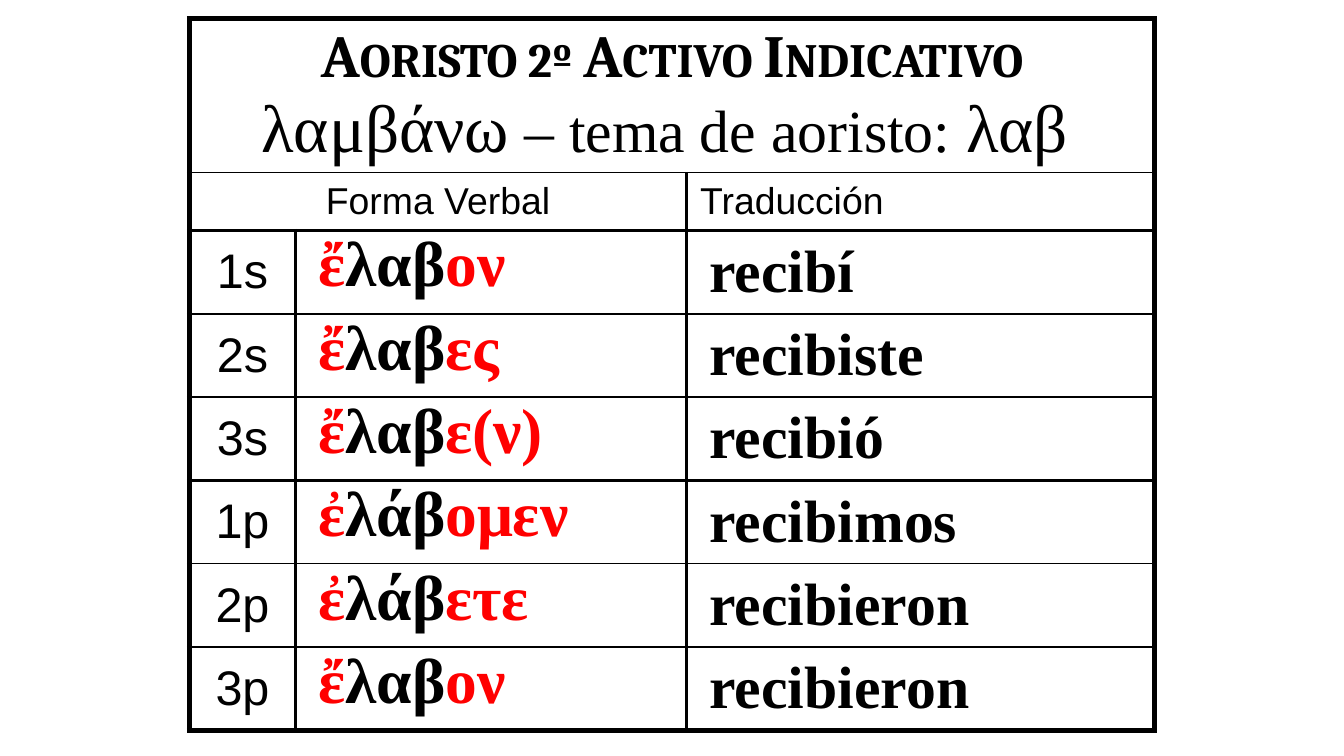
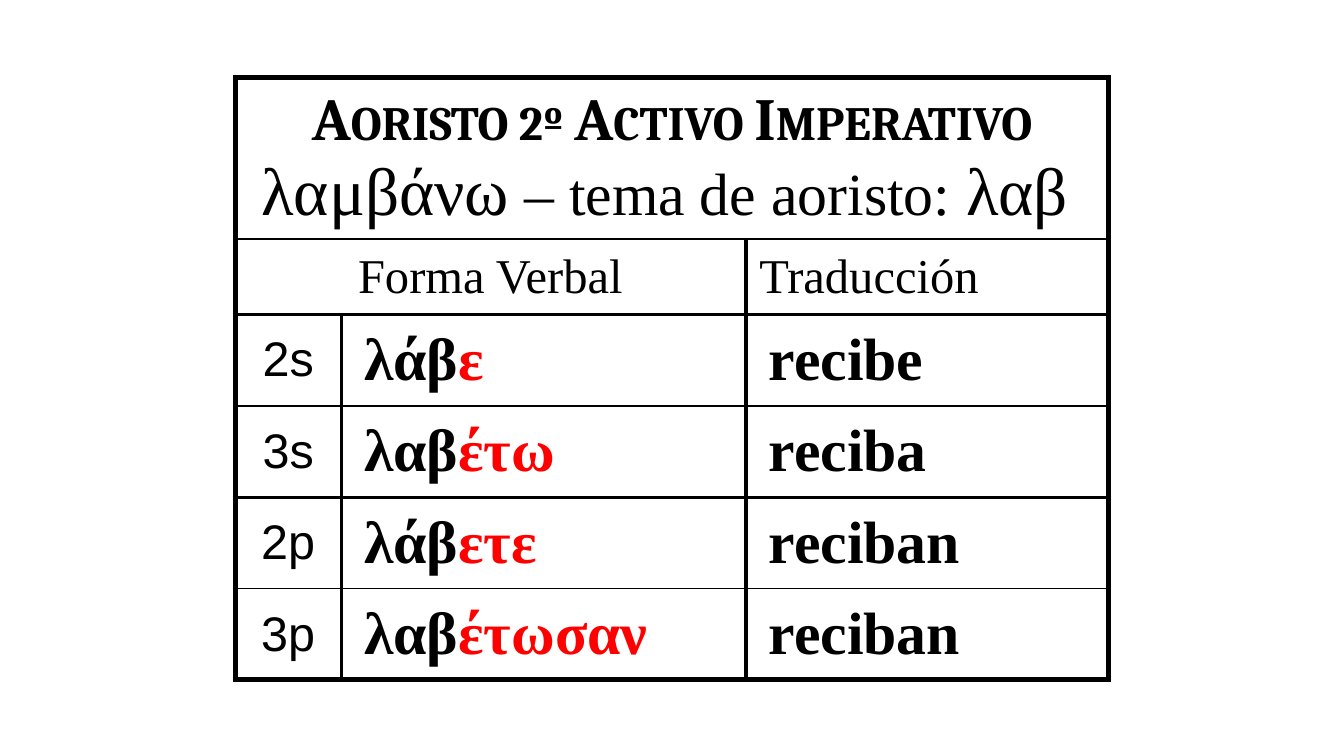
from dataclasses import dataclass

from lxml import etree
from pptx import Presentation
from pptx.dml.color import RGBColor
from pptx.enum.text import MSO_ANCHOR, PP_ALIGN
from pptx.oxml.ns import qn
from pptx.util import Inches, Pt

CENTER, LEFT, JUSTIFY = PP_ALIGN.CENTER, PP_ALIGN.LEFT, PP_ALIGN.JUSTIFY
TOP, MIDDLE = MSO_ANCHOR.TOP, MSO_ANCHOR.MIDDLE
PLAIN_TABLE_STYLE = "{2D5ABB26-0587-4C30-8999-92F81FD0307C}"


@dataclass(frozen=True)
class Theme:
    ink: str = "000000"
    accent: str = "FF0000"
    title_font: str = "Cambria"
    serif: str = "Times New Roman"
    sans: str = "Arial"
    title_size: int = 32
    verb_size: int = 36
    end_size: int = 28
    person_size: int = 26
    translation_size: int = 32
    outer_line: int = 3
    group_line: int = 2
    thin_line: int = 1


THEME = Theme()

# Content: each row is person, (augment, stem, ending), translation
VERB, NOTE, STEM = "λαμβάνω", " – tema de aoristo: ", "λαβ"
HEADERS = ("Forma Verbal", "Traducción")
PARADIGMS = [
    {
        "title": "Aoristo 2º Activo Indicativo",
        "box": (1.41, 0.14, 7.19, 5.35),
        "columns": (0.79, 2.91, 3.48),
        "title_height": 0.61, "header_height": 0.43, "row_height": 0.62,
        "header_font": THEME.sans, "header_size": 20,
        "form_size": 34, "form_anchor": TOP,
        "rows": [
            ("1s", ("ἔ", "λαβ", "ον"), "recibí"),
            ("2s", ("ἔ", "λαβ", "ες"), "recibiste"),
            ("3s", ("ἔ", "λαβ", "ε(ν)"), "recibió"),
            ("1p", ("ἐ", "λάβ", "ομεν"), "recibimos"),
            ("2p", ("ἐ", "λάβ", "ετε"), "recibieron"),
            ("3p", ("ἔ", "λαβ", "ον"), "recibieron"),
        ],
    },
    {
        "title": "Aoristo 2º Activo Imperativo",
        "box": (1.75, 0.58, 6.5, 4.47),
        "columns": (0.79, 3.01, 2.7),
        "title_height": 1.2, "header_height": 0.56, "row_height": 0.68,
        "header_font": THEME.serif, "header_size": 26,
        "form_size": 32, "form_anchor": MIDDLE,
        "rows": [
            ("2s", ("", "λάβ", "ε"), "recibe"),
            ("3s", ("", "λαβ", "έτω"), "reciba"),
            ("2p", ("", "λάβ", "ετε"), "reciban"),
            ("3p", ("", "λαβ", "έτωσαν"), "reciban"),
        ],
    },
]


def add_run(paragraph, text, font, size, bold=False, color=THEME.ink):
    run = paragraph.add_run()
    run.text = text
    run.font.name = font
    run.font.size = Pt(size)
    run.font.bold = bold
    run.font.color.rgb = RGBColor.from_string(color)
    return run


def format_paragraph(paragraph, align, margin, indent):
    paragraph.alignment = align
    properties = paragraph._p.get_or_add_pPr()
    properties.set("marL", str(Inches(margin)))
    properties.set("indent", str(Inches(indent)))


def label_paragraph(paragraph, align=CENTER):
    format_paragraph(paragraph, align, 0.38, -0.38)
    return paragraph


def set_cell(cell, anchor, horizontal, vertical):
    cell.vertical_anchor = anchor
    cell.margin_left = cell.margin_right = Inches(horizontal)
    cell.margin_top = cell.margin_bottom = Inches(vertical)


def label_cell(cell):
    set_cell(cell, MIDDLE, 0.1, 0.04)
    return cell.text_frame.paragraphs[0]


def word_cell(cell, anchor):
    set_cell(cell, anchor, 0.07, 0)
    paragraph = cell.text_frame.paragraphs[0]
    format_paragraph(paragraph, LEFT, 0, 0.1)
    return paragraph


def draw_border(cell, side, width):
    line = etree.SubElement(cell._tc.get_or_add_tcPr(), qn("a:ln" + side),
                            w=str(Pt(width)), cap="flat", cmpd="sng")
    fill = etree.SubElement(line, qn("a:solidFill"))
    etree.SubElement(fill, qn("a:srgbClr"), val=THEME.ink)
    etree.SubElement(line, qn("a:prstDash"), val="solid")


def draw_borders(table, persons):
    outer, group, thin = THEME.outer_line, THEME.group_line, THEME.thin_line
    # A heavier rule parts singular from plural
    between = [thin if upper[-1] == lower[-1] else group
               for upper, lower in zip(persons, persons[1:])]
    horizontals = [outer, thin, group, *between, outer]
    verticals = [(outer, None, None, outer), (outer, None, group, outer)]
    verticals += [(outer, group, group, outer)] * len(persons)
    for row, edges in enumerate(verticals):
        for column in range(3):
            cell = table.cell(row, column)
            span = cell.span_width if cell.is_merge_origin else 1
            widths = {"L": edges[column], "R": edges[column + span],
                      "T": horizontals[row], "B": horizontals[row + 1]}
            for side, width in widths.items():
                if width:
                    draw_border(cell, side, width)
            cell.fill.background()


def fill_title(cell, title):
    heading = label_paragraph(label_cell(cell))
    run = add_run(heading, title, THEME.title_font, THEME.title_size, True)
    run.font._element.set("cap", "small")
    subtitle = label_paragraph(cell.text_frame.add_paragraph())
    for text, font, size in ((VERB, THEME.serif, THEME.verb_size),
                             (NOTE, THEME.serif, THEME.title_size),
                             (STEM, THEME.serif, THEME.verb_size),
                             (" ", THEME.sans, THEME.end_size)):
        add_run(subtitle, text, font, size)


def add_paradigm(slide, paradigm):
    rows = paradigm["rows"]
    box = [Inches(value) for value in paradigm["box"]]
    frame = slide.shapes.add_table(len(rows) + 2, 3, *box)
    table = frame.table
    table.first_row = table.horz_banding = False
    table._tbl.tblPr.find(qn("a:tableStyleId")).text = PLAIN_TABLE_STYLE
    for column, width in zip(table.columns, paradigm["columns"]):
        column.width = Inches(width)
    heights = [paradigm["title_height"], paradigm["header_height"]]
    heights += [paradigm["row_height"]] * len(rows)
    for row, height in zip(table.rows, heights):
        row.height = Inches(height)
    frame.height = box[3]

    # Title and column headers
    table.cell(0, 0).merge(table.cell(0, 2))
    table.cell(1, 0).merge(table.cell(1, 1))
    fill_title(table.cell(0, 0), paradigm["title"])
    for text, column, align in zip(HEADERS, (0, 2), (CENTER, JUSTIFY)):
        paragraph = label_paragraph(label_cell(table.cell(1, column)), align)
        add_run(paragraph, text, paradigm["header_font"], paradigm["header_size"])

    # Verb forms, with augment and ending in the accent colour
    for index, (person, parts, translation) in enumerate(rows, start=2):
        paragraph = label_paragraph(label_cell(table.cell(index, 0)))
        add_run(paragraph, person, THEME.sans, THEME.person_size)
        paragraph = word_cell(table.cell(index, 1), paradigm["form_anchor"])
        for text, color in zip(parts, (THEME.accent, THEME.ink, THEME.accent)):
            if text:
                add_run(paragraph, text, THEME.serif, paradigm["form_size"], True, color)
        paragraph = word_cell(table.cell(index, 2), MIDDLE)
        add_run(paragraph, translation, THEME.serif, THEME.translation_size, True)

    draw_borders(table, [row[0] for row in rows])


def main():
    presentation = Presentation()
    # Widescreen, 16 to 9
    presentation.slide_width = Inches(10)
    presentation.slide_height = Inches(10) * 9 // 16
    for paradigm in PARADIGMS:
        slide = presentation.slides.add_slide(presentation.slide_layouts[6])
        add_paradigm(slide, paradigm)
    presentation.save("out.pptx")


if __name__ == "__main__":
    main()
